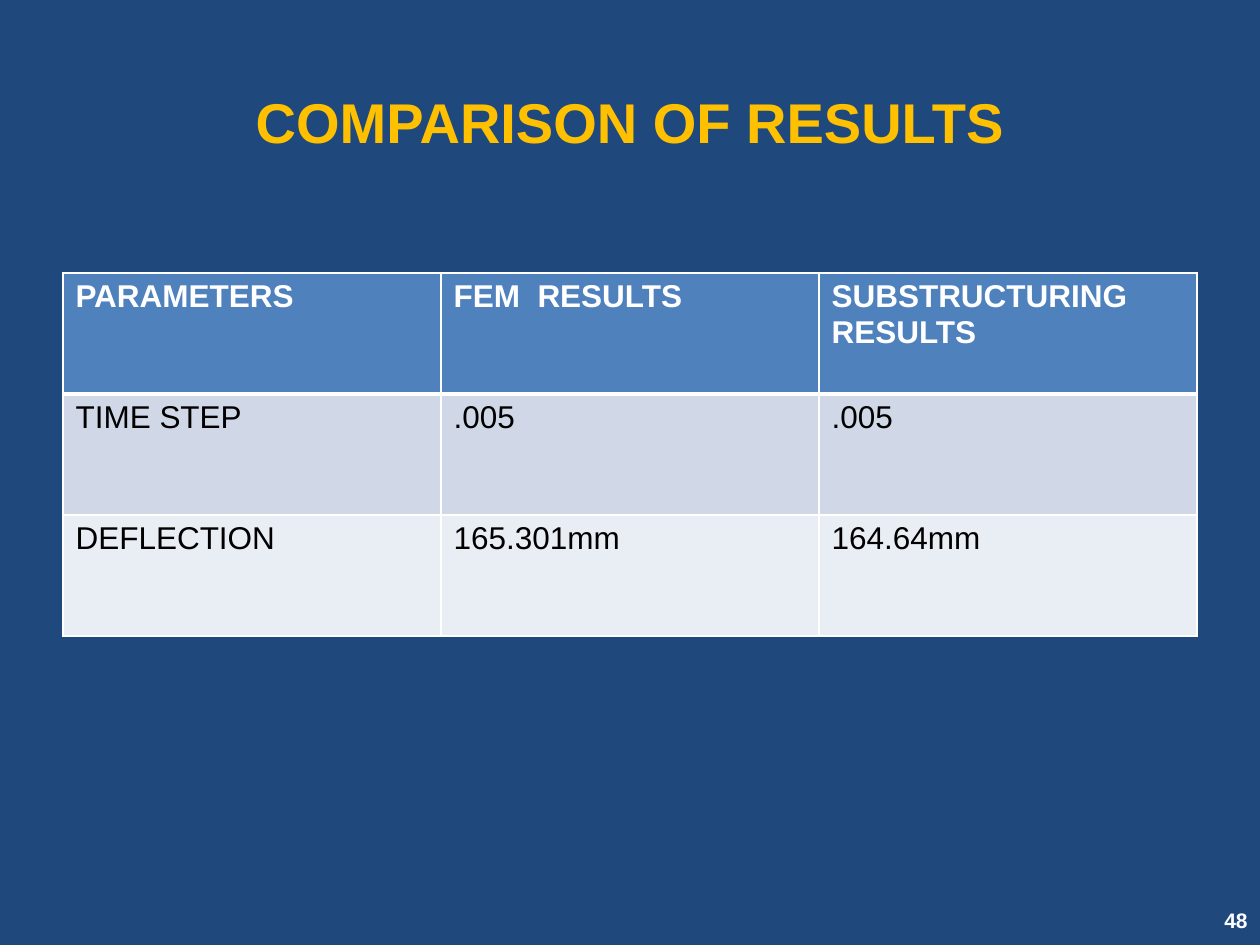
"""Builds the results comparison slide: a title, a three-column table and a page number."""
from dataclasses import dataclass

from lxml.etree import SubElement
from pptx import Presentation
from pptx.dml.color import RGBColor as RGB
from pptx.enum.text import MSO_ANCHOR as Anchor, PP_ALIGN as Align
from pptx.oxml.ns import qn
from pptx.util import Emu, Pt


@dataclass(frozen=True)
class Theme:
    font: str = "Arial"
    background: str = "1F497D"
    title: str = "FFC000"
    light: str = "FFFFFF"
    dark: str = "000000"
    row_fills: tuple = ("4F81BD", "D0D8E8", "E9EDF4")
    title_size: int = 32
    table_size: int = 18
    number_size: int = 12
    thin: int = 1
    thick: int = 3


theme = Theme()


def px(*lengths):
    return [Emu(round(length * 914400 / 126)) for length in lengths]


def write(frame, text, size, color, bold, align=Align.LEFT):
    frame.text = text
    for paragraph in frame.paragraphs:
        paragraph.alignment = align
        font = paragraph.font
        font.name, font.size, font.bold = theme.font, Pt(size), bold
        font.color.rgb = RGB.from_string(color)


deck = Presentation()
deck.slide_width, deck.slide_height = px(1260, 945)
slide = deck.slides.add_slide(deck.slide_layouts[5])
slide.background.fill.solid()
slide.background.fill.fore_color.rgb = RGB.from_string(theme.background)

heading = slide.shapes.title
heading.left, heading.top, heading.width, heading.height = px(63, 42, 1134, 158)
heading.text_frame.vertical_anchor = Anchor.MIDDLE
write(heading.text_frame, "COMPARISON OF RESULTS", theme.title_size, theme.title, True, Align.CENTER)

results = [
    ("PARAMETERS", "FEM  RESULTS", "SUBSTRUCTURING\nRESULTS"),
    ("TIME STEP", ".005", ".005"),
    ("DEFLECTION", "165.301mm", "164.64mm"),
]
comparison = slide.shapes.add_table(3, 3, *px(63, 273, 1134, 363)).table
for row, (values, fill) in enumerate(zip(results, theme.row_fills)):
    is_header = row == 0
    text_color = theme.light if is_header else theme.dark
    edges = {
        "a:lnL": theme.thin,
        "a:lnR": theme.thin,
        "a:lnT": theme.thick if row == 1 else theme.thin,
        "a:lnB": theme.thick if is_header else theme.thin,
    }
    for column, value in enumerate(values):
        cell = comparison.cell(row, column)
        write(cell.text_frame, value, theme.table_size, text_color, is_header)
        properties = cell._tc.get_or_add_tcPr()
        for edge, weight in edges.items():
            border = SubElement(properties, qn(edge), w=str(Pt(weight)))
            SubElement(SubElement(border, qn("a:solidFill")), qn("a:srgbClr"), val=theme.light)
        cell.fill.solid()
        cell.fill.fore_color.rgb = RGB.from_string(fill)

page_number = slide.shapes.add_textbox(*px(1176, 895, 84, 50)).text_frame
page_number.word_wrap = True
page_number.vertical_anchor = Anchor.MIDDLE
write(page_number, "48", theme.number_size, theme.light, True, Align.RIGHT)

deck.save("out.pptx")
